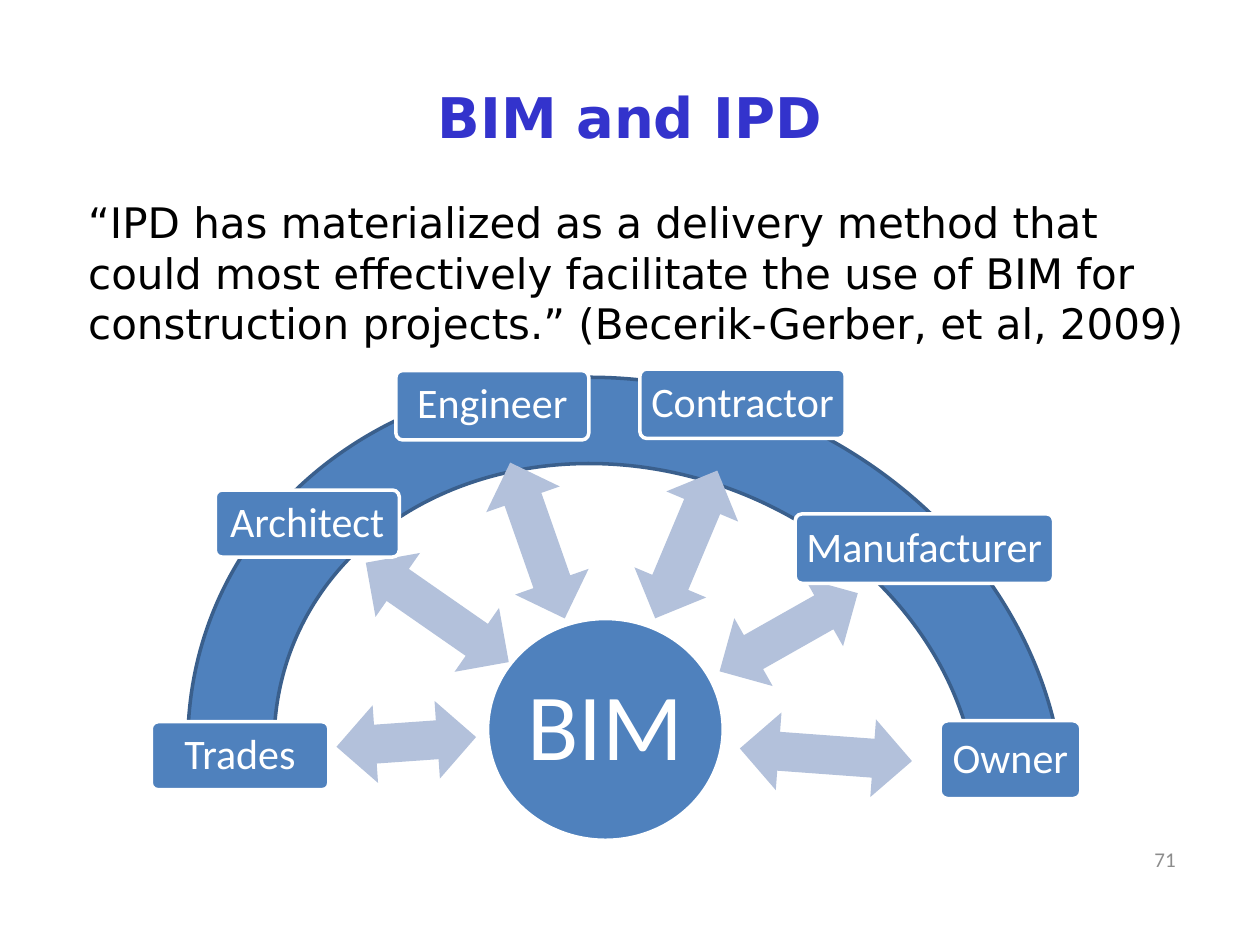
"""Build the slide on BIM and IPD with its arc of project parties."""
import pptx
import pptx.util
import pptx.dml.color
import pptx.enum.shapes
import pptx.enum.text

Cm = pptx.util.Cm
PRESET = pptx.enum.shapes.MSO_SHAPE
ALIGN = pptx.enum.text.PP_ALIGN
ANCHOR = pptx.enum.text.MSO_ANCHOR

COLORS = {
    "title": "3333CC",
    "body": "000000",
    "number": "8C8C8C",
    "blue": "4F81BD",
    "edge": "3A5F8C",
    "arrow": "B3C1DB",
    "white": "FFFFFF",
}

TITLE = "BIM and IPD"
QUOTE = (
    "“IPD has materialized as a delivery method that could most effectively "
    "facilitate the use of BIM for construction projects.” "
    "(Becerik-Gerber, et al, 2009)"
)
NUMBER = "71"
HUB = "BIM"

ARC_PLACE = (3.66, 7.75, 17.93, 15.82)
ARC_BENDS = (95.5, 202.92, 0.11)
HUB_PLACE = (9.83, 12.47, 4.75, 4.47)
ARROW_HEIGHT = 1.57

PARTIES = [
    ("Trades", (3.05, 14.55, 3.58, 1.37), (6.78, 14.17, 2.82), 176),
    ("Architect", (4.34, 9.88, 3.71, 1.35), (7.06, 11.56, 3.51), 214.8),
    ("Engineer", (7.98, 7.47, 3.89, 1.4), (9.17, 10.11, 3.33), 250.7),
    ("Contractor", (12.9, 7.44, 4.14, 1.4), (12.22, 10.19, 3.23), 292.8),
    ("Manufacturer", (16.03, 10.36, 5.21, 1.4), (14.3, 11.96, 3.2), 330.5),
    ("Owner", (18.95, 14.53, 2.84, 1.57), (14.91, 14.43, 3.48), 4.2),
]


def rgb(name):
    return pptx.dml.color.RGBColor.from_string(COLORS[name])


def write(holder, text, *, size, color="white", font="Calibri", bold=False,
          align=ALIGN.CENTER, anchor=ANCHOR.MIDDLE, spacing=1.0,
          insets=(0.25, 0.13, 0.25, 0.13)):
    frame = holder.text_frame
    frame.word_wrap = True
    frame.vertical_anchor = anchor
    (frame.margin_left, frame.margin_top,
     frame.margin_right, frame.margin_bottom) = map(Cm, insets)
    paragraph = frame.paragraphs[0]
    paragraph.alignment = align
    paragraph.line_spacing = spacing
    run = paragraph.add_run()
    run.text = text
    run.font.size = pptx.util.Pt(size)
    run.font.name = font
    run.font.bold = bold
    run.font.color.rgb = rgb(color)


def add_preset(slide, preset, place, fill, line=None, rotation=0, bends=()):
    shape = slide.shapes.add_shape(preset, *map(Cm, place))
    shape.shadow.inherit = False
    shape.rotation = rotation
    shape.fill.solid()
    shape.fill.fore_color.rgb = rgb(fill)
    if line:
        shape.line.color.rgb = rgb(line)
        shape.line.width = pptx.util.Pt(2)
    else:
        shape.line.fill.background()
    for index, bend in enumerate(bends):
        shape.adjustments[index] = bend
    return shape


def add_text(slide, place, text, **look):
    write(slide.shapes.add_textbox(*map(Cm, place)), text, **look)


def main():
    deck = pptx.Presentation()
    deck.slide_width, deck.slide_height = Cm(25.4), Cm(19.05)
    slide = deck.slides.add_slide(deck.slide_layouts[6])

    add_text(slide, (1.27, 0.76, 22.86, 3.18), TITLE, size=32,
             color="title", font="DejaVu Sans", bold=True)
    add_text(slide, (0.56, 3.84, 23.6, 12.57), QUOTE, size=24, color="body",
             font="DejaVu Sans", align=ALIGN.LEFT, anchor=ANCHOR.TOP,
             insets=(1.22, 0.13, 0.25, 0.13))
    add_text(slide, (18.26, 16.84, 5.69, 0.97), NUMBER, size=12,
             color="number", align=ALIGN.RIGHT)

    add_preset(slide, PRESET.BLOCK_ARC, ARC_PLACE, "blue", "edge", 21, ARC_BENDS)
    hub = add_preset(slide, PRESET.OVAL, HUB_PLACE, "blue", "white")
    write(hub, HUB, size=54, spacing=0.9, insets=(0.1,) * 4)

    for party, box_place, arrow_place, angle in PARTIES:
        add_preset(slide, PRESET.LEFT_RIGHT_ARROW,
                   (*arrow_place, ARROW_HEIGHT), "arrow", rotation=angle)
        box = add_preset(slide, PRESET.ROUNDED_RECTANGLE, box_place,
                         "blue", "white", bends=(0.1,))
        write(box, party, size=24, spacing=0.9, insets=(0.13,) * 4)

    deck.save("out.pptx")


if __name__ == "__main__":
    main()
